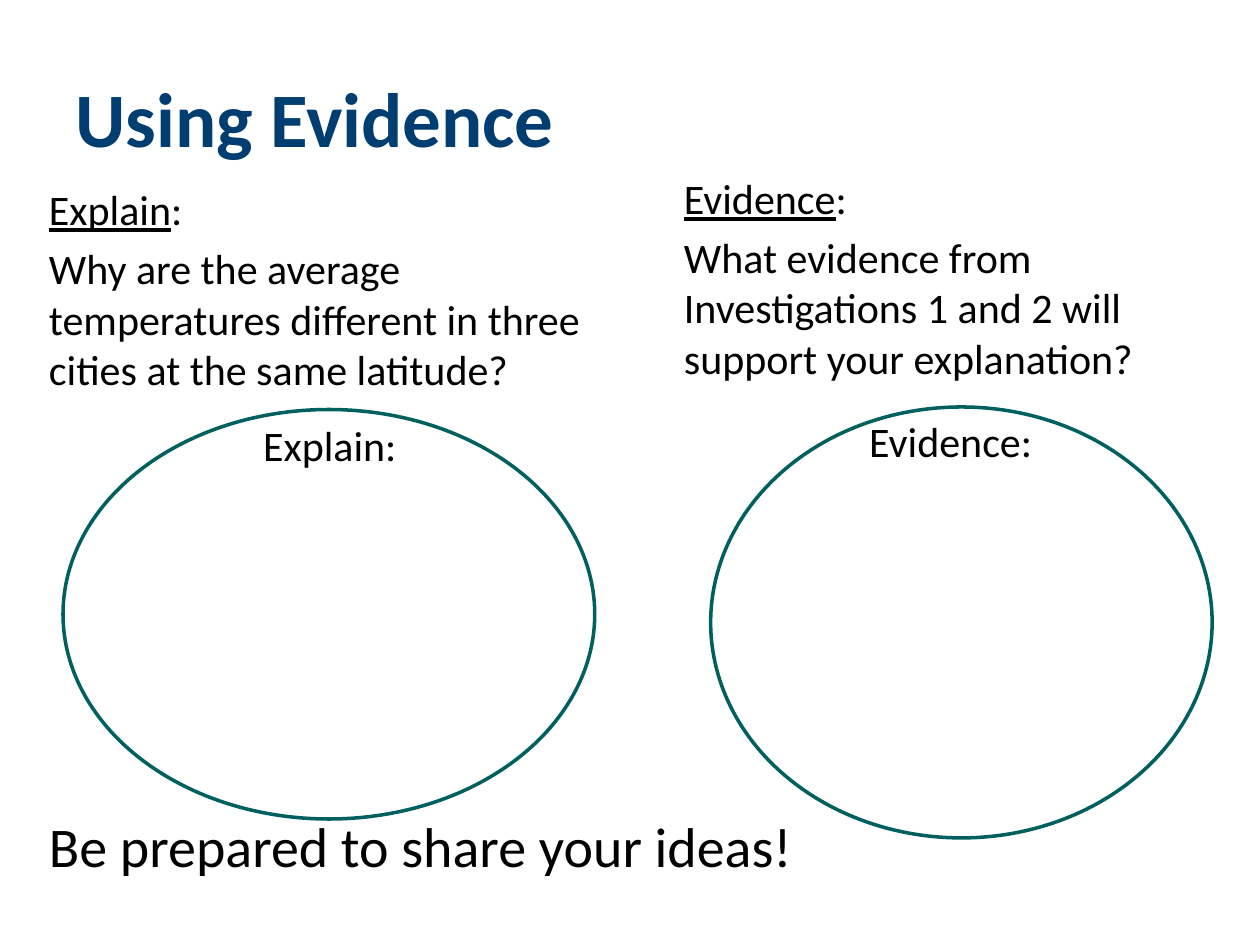
from dataclasses import dataclass

from pptx import Presentation
from pptx import util as u
from pptx.dml.color import RGBColor
from pptx.enum import shapes, text


@dataclass(frozen=True)
class Theme:
    font: str = "Calibri"
    title_color: RGBColor = RGBColor(0x00, 0x3D, 0x71)
    ink: RGBColor = RGBColor(0x00, 0x00, 0x00)
    outline: RGBColor = RGBColor(0x00, 0x5F, 0x5F)
    title_size: int = 44
    closing_size: int = 32
    body_size: int = 24
    outline_width: int = 2
    paragraph_gap: float = 4.8


class SlideBuilder:
    def __init__(self, prs, theme):
        self.theme = theme
        self.s = prs.slides.add_slide(prs.slide_layouts[5])

    def place(self, sp, box):
        sp.left, sp.top, sp.width, sp.height = map(u.Inches, box)

    def style(self, p, size, color, bold=False):
        p.alignment = text.PP_ALIGN.LEFT
        p.font.name = self.theme.font
        p.font.size = u.Pt(size)
        p.font.color.rgb = color
        p.font.bold = bold

    def title(self, words, box):
        sp = self.s.shapes.title
        self.place(sp, box)
        tf = sp.text_frame
        tf.text = words
        tf.vertical_anchor = text.MSO_ANCHOR.MIDDLE
        self.style(tf.paragraphs[0], self.theme.title_size,
                   self.theme.title_color, bold=True)

    def text_box(self, words, box, size):
        tf = self.s.shapes.add_textbox(*map(u.Inches, box)).text_frame
        tf.word_wrap = True
        p = tf.paragraphs[0]
        p.text = words
        self.style(p, size, self.theme.ink)
        return tf

    def prompt(self, heading, question, box):
        tf = self.text_box(heading, box, self.theme.body_size)
        p = tf.paragraphs[0]
        p.runs[0].font.underline = True
        p.add_run().text = ":"
        p = tf.add_paragraph()
        p.text = question
        p.space_before = u.Pt(self.theme.paragraph_gap)
        self.style(p, self.theme.body_size, self.theme.ink)

    def oval(self, box):
        sp = self.s.shapes.add_shape(shapes.MSO_SHAPE.OVAL, *map(u.Inches, box))
        sp.shadow.inherit = False
        sp.fill.background()
        sp.line.color.rgb = self.theme.outline
        sp.line.width = u.Pt(self.theme.outline_width)


def main():
    prs = Presentation()
    prs.slide_width, prs.slide_height = u.Inches(10), u.Inches(7.5)
    theme = Theme()
    slide = SlideBuilder(prs, theme)

    slide.title("Using Evidence", (0.5, 0.3, 9, 1.25))
    columns = [
        ("Explain",
         "Why are the average temperatures different in three cities "
         "at the same latitude?",
         (0.29, 1.41, 4.75, 1.42), (0.5, 3.25, 4.22, 3.25), (1.99, 3.28, 1.66, 0.5)),
        ("Evidence",
         "What evidence from Investigations 1 and 2 will support your explanation?",
         (5.33, 1.32, 4.33, 1.23), (5.64, 3.23, 3.98, 3.42), (6.8, 3.25, 1.65, 0.5)),
    ]
    for heading, question, prompt_box, oval_box, label_box in columns:
        slide.prompt(heading, question, prompt_box)
        slide.oval(oval_box)
        slide.text_box(f"{heading}:", label_box, theme.body_size)
    slide.text_box("Be prepared to share your ideas!", (0.29, 6.39, 9.25, 0.64),
                   theme.closing_size)

    prs.save("out.pptx")


if __name__ == "__main__":
    main()
